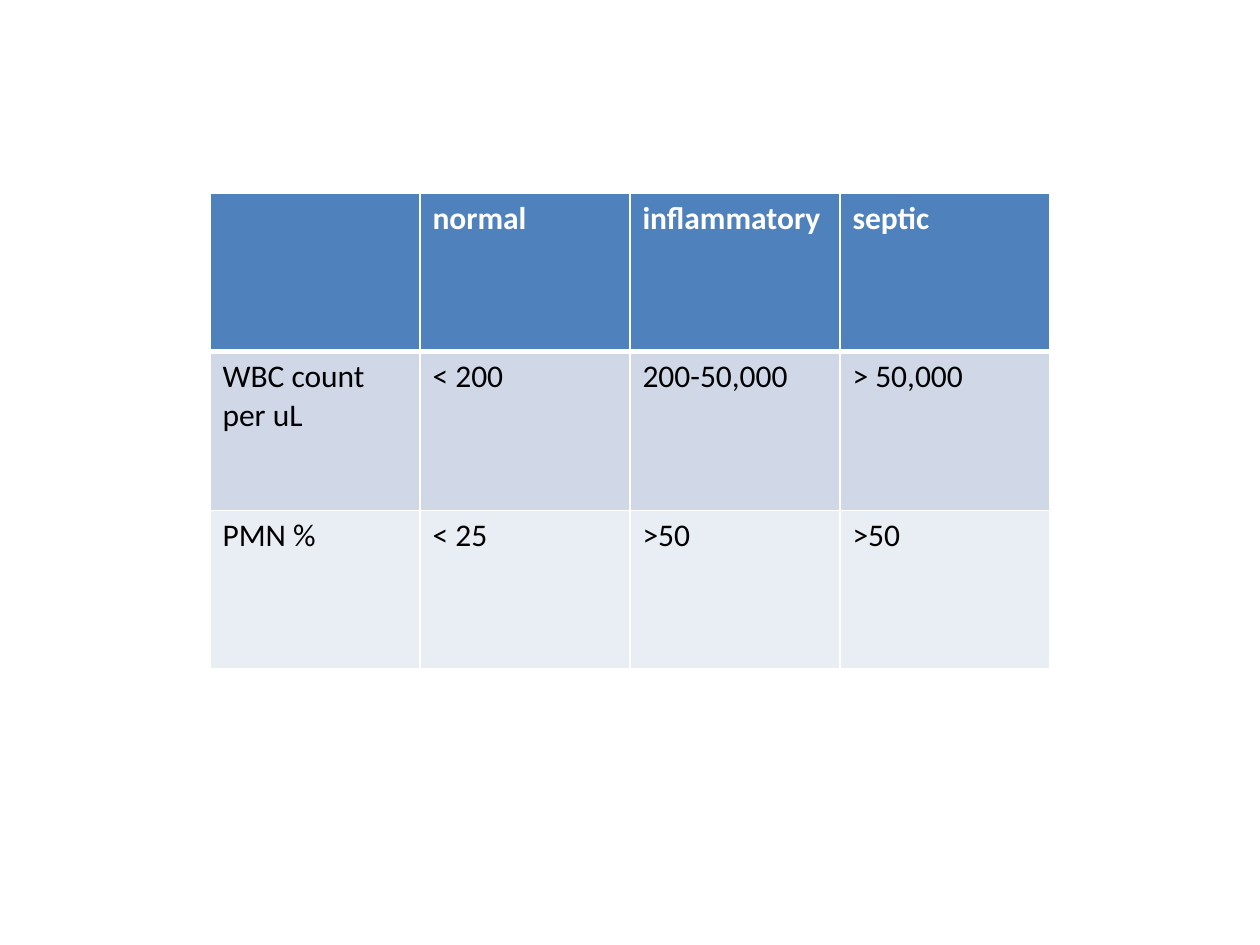
from lxml.etree import SubElement
from pptx import Presentation
from pptx.dml.color import RGBColor
from pptx.oxml.ns import qn
from pptx.util import Inches, Pt

SLIDE_WIDTH, SLIDE_HEIGHT = Inches(10), Inches(7.5)
ROWS = [
    ["", "normal", "inflammatory", "septic"],
    ["WBC count per uL", "< 200", "200-50,000", "> 50,000"],
    ["PMN %", "< 25", ">50", ">50"],
]
ROW_FILLS = ["4F81BD", "D0D8E8", "E9EDF4"]
BORDER_COLOR = "FFFFFF"


def color(value):
    return RGBColor.from_string(value)


def set_borders(cell, top=1, bottom=1):
    properties = cell._tc.get_or_add_tcPr()
    widths = {"a:lnL": 1, "a:lnR": 1, "a:lnT": top, "a:lnB": bottom}
    for tag, width in widths.items():
        line = SubElement(properties, qn(tag), w=str(Pt(width)))
        fill = SubElement(line, qn("a:solidFill"))
        SubElement(fill, qn("a:srgbClr"), val=BORDER_COLOR)


def write_text(cell, text, size=18, font_color="000000", bold=False):
    paragraph = cell.text_frame.paragraphs[0]
    paragraph.font.size = Pt(size)
    if not text:
        return
    run = paragraph.add_run()
    run.text = text
    run.font.name = "Calibri"
    run.font.size = Pt(size)
    run.font.bold = bold
    run.font.color.rgb = color(font_color)


def add_cell_counts_table(slide):
    left, top = SLIDE_WIDTH // 6, Inches(1.53)
    width, height = SLIDE_WIDTH * 2 // 3, Inches(3.78)
    table = slide.shapes.add_table(
        len(ROWS), len(ROWS[0]), left, top, width, height
    ).table
    for row_index, (texts, fill) in enumerate(zip(ROWS, ROW_FILLS)):
        is_header = row_index == 0
        for column_index, text in enumerate(texts):
            cell = table.cell(row_index, column_index)
            set_borders(
                cell,
                top=3 if row_index == 1 else 1,
                bottom=3 if is_header else 1,
            )
            cell.fill.solid()
            cell.fill.fore_color.rgb = color(fill)
            write_text(
                cell,
                text,
                font_color="FFFFFF" if is_header else "000000",
                bold=is_header,
            )


def main():
    presentation = Presentation()
    presentation.slide_width = SLIDE_WIDTH
    presentation.slide_height = SLIDE_HEIGHT
    slide = presentation.slides.add_slide(presentation.slide_layouts[6])
    add_cell_counts_table(slide)
    presentation.save("out.pptx")


if __name__ == "__main__":
    main()
